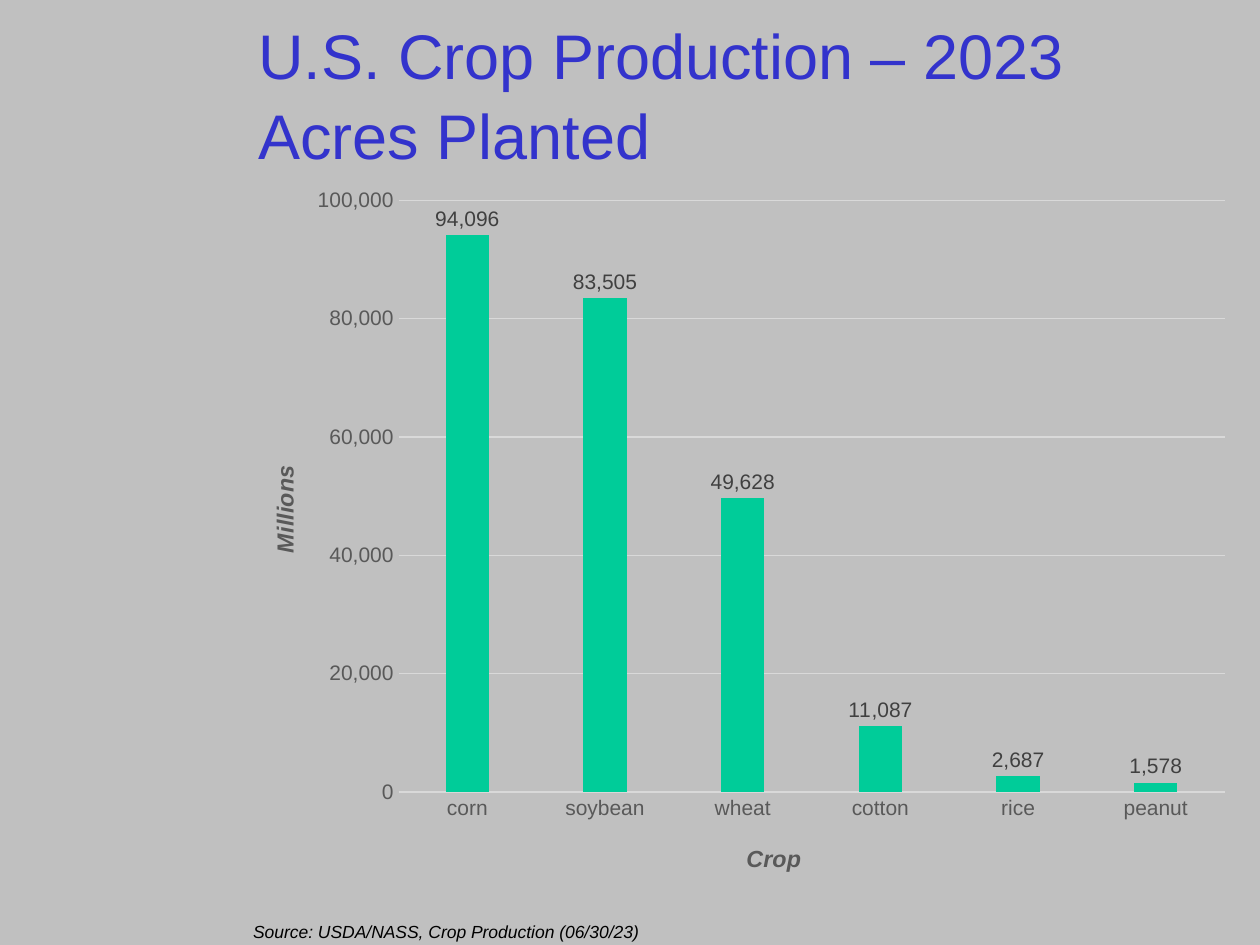
"""Build the slide on acres planted per crop in the United States in 2023."""

from dataclasses import dataclass

from lxml.etree import _Element as Element
from pptx import Presentation
from pptx.chart.axis import _BaseAxis as Axis
from pptx.chart.chart import Chart
from pptx.chart.data import CategoryChartData
from pptx.dml.color import RGBColor
from pptx.dml.line import LineFormat
from pptx.enum.chart import XL_CHART_TYPE as ChartType
from pptx.enum.chart import XL_LABEL_POSITION as LabelPosition
from pptx.enum.chart import XL_TICK_MARK as TickMark
from pptx.enum.text import MSO_ANCHOR as Anchor
from pptx.enum.text import MSO_AUTO_SIZE as AutoSize
from pptx.enum.text import PP_ALIGN as Align
from pptx.oxml import parse_xml
from pptx.oxml.ns import nsdecls, qn
from pptx.slide import Slide
from pptx.text.text import Font, TextFrame
from pptx.util import Inches, Pt

BACKGROUND = RGBColor(0xC0, 0xC0, 0xC0)
TITLE_BLUE = RGBColor(0x33, 0x33, 0xCC)
BAR_GREEN = RGBColor(0x00, 0xCC, 0x99)
AXIS_GRAY = RGBColor(0x59, 0x59, 0x59)
LABEL_GRAY = RGBColor(0x40, 0x40, 0x40)
GRID_GRAY = RGBColor(0xD9, 0xD9, 0xD9)
BLACK = RGBColor(0x00, 0x00, 0x00)

FONT = "Arial"
NUMBER_FORMAT = "#,##0"
CELL = Inches(1)
COLUMNS, ROWS = 10, 7.5
ACRES = {
    "corn": 94096,
    "soybean": 83505,
    "wheat": 49628,
    "cotton": 11087,
    "rice": 2687,
    "peanut": 1578,
}


@dataclass(frozen=True)
class Area:
    """A rectangle in columns and rows of the slide grid."""

    column: float
    row: float
    columns: float
    rows: float

    def lengths(self) -> tuple[int, ...]:
        """Return left, top, width and height."""
        return tuple(round(cells * CELL) for cells in (self.column, self.row, self.columns, self.rows))


@dataclass(frozen=True)
class AxisTitle:
    """An axis title, placed by shares of the chart, with its rotation."""

    text: str
    left: float
    top: float
    degrees: int


TITLE_AREA = Area(1.95, 0.11, 7.97, 1.25)
CHART_AREA = Area(1.95, 1.43, 7.88, 5.57)
SOURCE_AREA = Area(1.91, 7.26, 3.29, 0.27)
CROP_TITLE = AxisTitle("Crop", 0.5, 0.94, 0)
MILLIONS_TITLE = AxisTitle("Millions", 0.02, 0.4, -90)


def style_font(font: Font, size: float, color: RGBColor, bold: bool = False, italic: bool = False) -> None:
    """Set the face, size, colour and emphasis of a font."""
    font.name, font.size, font.bold, font.italic = FONT, Pt(size), bold, italic
    font.color.rgb = color


def style_line(line: LineFormat) -> None:
    """Make a thin light grey line."""
    line.color.rgb = GRID_GRAY
    line.width = Pt(0.75)


def set_insets(frame: TextFrame) -> None:
    """Set the usual text margins."""
    frame.margin_left = frame.margin_right = Inches(0.1)
    frame.margin_top = frame.margin_bottom = Inches(0.05)


def set_layout(parent: Element, index: int, **settings: object) -> None:
    """Give a chart part a manual layout."""
    for old in parent.findall(qn("c:layout")):
        parent.remove(old)
    entries = "".join(f'<c:{name} val="{value}"/>' for name, value in settings.items())
    parent.insert(index, parse_xml(
        f'<c:layout {nsdecls("c")}><c:manualLayout>{entries}</c:manualLayout></c:layout>'))


def style_axis(axis: Axis, title: AxisTitle) -> None:
    """Format an axis and add its title."""
    axis.major_tick_mark = axis.minor_tick_mark = TickMark.NONE
    style_font(axis.tick_labels.font, 12, AXIS_GRAY)
    frame = axis.axis_title.text_frame
    frame.text = title.text
    style_font(frame.paragraphs[0].font, 13.3, AXIS_GRAY, bold=True, italic=True)
    body = frame._txBody.find(qn("a:bodyPr"))
    body.set("rot", str(title.degrees * 60000))
    body.set("vert", "horz")
    set_layout(axis.axis_title._element, 1, xMode="edge", yMode="edge", x=title.left, y=title.top)


def add_title(slide: Slide) -> None:
    """Fill and format the title placeholder."""
    title = slide.shapes.title
    title.left, title.top, title.width, title.height = TITLE_AREA.lengths()
    frame = title.text_frame
    frame.text = "U.S. Crop Production – 2023\vAcres Planted"
    frame.auto_size, frame.word_wrap = AutoSize.NONE, True
    frame.vertical_anchor = Anchor.MIDDLE
    set_insets(frame)
    para = frame.paragraphs[0]
    para.alignment = Align.LEFT
    para.line_spacing = 1.05
    style_font(para.font, 36, TITLE_BLUE)


def style_bars(chart: Chart) -> None:
    """Format the bars and their value labels."""
    plot = chart.plots[0]
    plot.gap_width, plot.overlap, plot.vary_by_categories = 219, -27, False
    fill = plot.series[0].format.fill
    fill.solid()
    fill.fore_color.rgb = BAR_GREEN
    labels = plot.series[0].data_labels
    labels.show_value = True
    labels.position = LabelPosition.OUTSIDE_END
    labels.number_format, labels.number_format_is_linked = NUMBER_FORMAT, False
    style_font(labels.font, 12, LABEL_GRAY)


def add_crop_chart(slide: Slide) -> None:
    """Add the column chart of acres by crop."""
    data = CategoryChartData(number_format=NUMBER_FORMAT)
    data.categories = list(ACRES)
    data.add_series("Series 1", list(ACRES.values()))
    chart = slide.shapes.add_chart(ChartType.COLUMN_CLUSTERED, *CHART_AREA.lengths(), data).chart
    chart.has_title = chart.has_legend = False
    style_font(chart.font, 10, BLACK)
    style_bars(chart)

    crops, acres = chart.category_axis, chart.value_axis
    style_axis(crops, CROP_TITLE)
    style_axis(acres, MILLIONS_TITLE)
    style_line(crops.format.line)
    acres.format.line.fill.background()
    acres.has_major_gridlines = True
    style_line(acres.major_gridlines.format.line)
    acres.minimum_scale, acres.maximum_scale, acres.major_unit = 0, 100000, 20000
    acres.tick_labels.number_format = NUMBER_FORMAT
    acres.tick_labels.number_format_is_linked = False

    body = chart._chartSpace.find(qn("c:chart"))
    set_layout(body.find(qn("c:plotArea")), 0, layoutTarget="inner", xMode="edge", yMode="edge",
               x=0.154, y=0.029, w=0.832, h=0.843)
    body.addnext(parse_xml(
        f'<c:spPr {nsdecls("c", "a")}><a:noFill/><a:ln><a:noFill/></a:ln></c:spPr>'))


def add_source(slide: Slide) -> None:
    """Add the source line at the foot."""
    frame = slide.shapes.add_textbox(*SOURCE_AREA.lengths()).text_frame
    frame.text = "Source: USDA/NASS, Crop Production (06/30/23)"
    frame.word_wrap, frame.auto_size = False, AutoSize.SHAPE_TO_FIT_TEXT
    set_insets(frame)
    style_font(frame.paragraphs[0].font, 10, BLACK, italic=True)


def main() -> None:
    """Build and save the deck."""
    deck = Presentation()
    deck.slide_width, deck.slide_height = COLUMNS * CELL, round(ROWS * CELL)
    slide = deck.slides.add_slide(deck.slide_layouts.get_by_name("Title Only"))
    slide.background.fill.solid()
    slide.background.fill.fore_color.rgb = BACKGROUND
    add_title(slide)
    add_crop_chart(slide)
    add_source(slide)
    deck.save("out.pptx")


if __name__ == "__main__":
    main()
